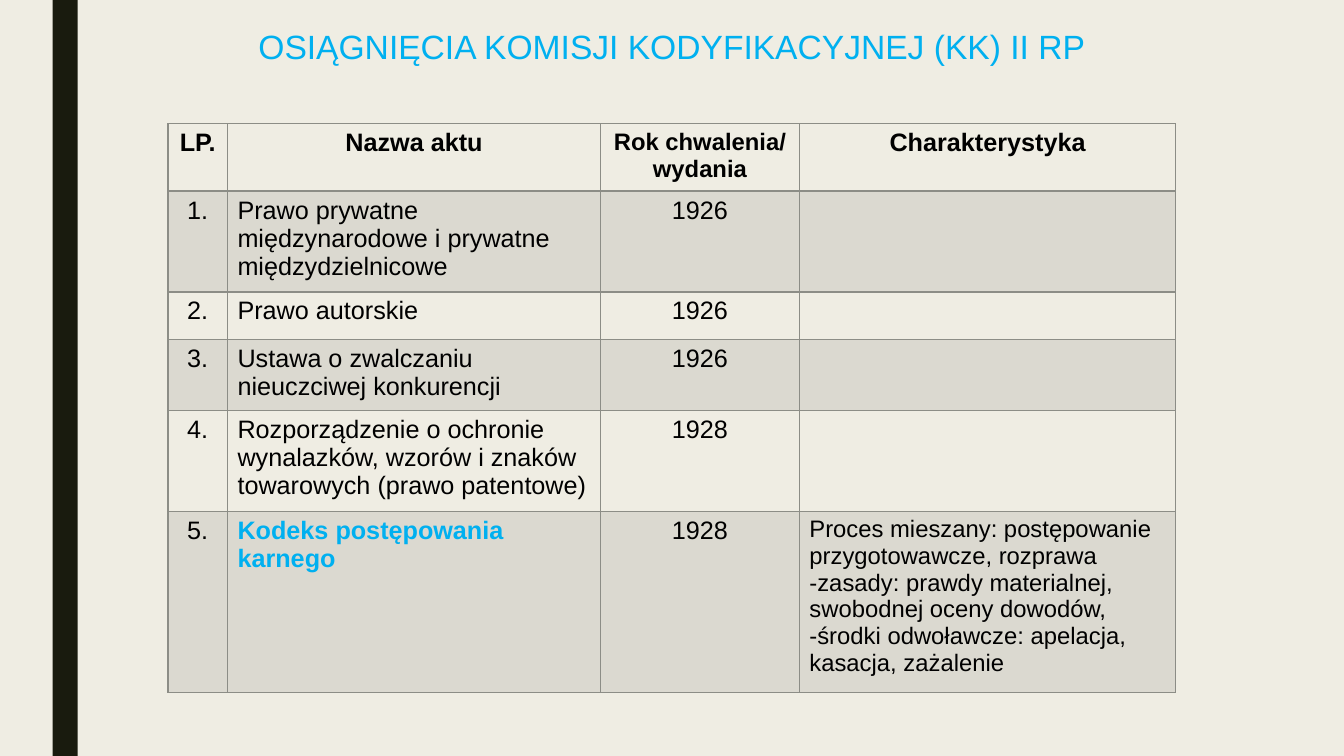
import pptx
import pptx.util
import pptx.dml.color
import pptx.enum.shapes
import pptx.enum.text
import pptx.oxml
import pptx.oxml.ns
import lxml.etree

Pt = pptx.util.Pt
CENTER = pptx.enum.text.PP_ALIGN.CENTER
LEFT = pptx.enum.text.PP_ALIGN.LEFT

BACKGROUND = "EFEDE3"
BAR = "191B0E"
ACCENT = "00B0F0"
INK = "000000"
GRID = "8C8D86"
BAND_OPACITY = 20

COLUMN_WIDTHS = [42.5, 266.5, 142, 269]
ROW_HEIGHTS = [48, 72, 34, 50.5, 72, 129.5]
ALIGNMENTS = [CENTER, LEFT, CENTER, LEFT]
ROWS = [
    ["LP.", "Nazwa aktu", "Rok chwalenia/ wydania", "Charakterystyka"],
    ["1.", "Prawo prywatne międzynarodowe i prywatne\nmiędzydzielnicowe", "1926", ""],
    ["2.", "Prawo autorskie", "1926", ""],
    ["3.", "Ustawa o zwalczaniu nieuczciwej konkurencji", "1926", ""],
    ["4.", "Rozporządzenie o ochronie wynalazków, wzorów i znaków\n"
           "towarowych (prawo patentowe)", "1928", ""],
    ["5.", "Kodeks postępowania\nkarnego", "1928",
     "Proces mieszany: postępowanie przygotowawcze, rozprawa\n"
     "-zasady: prawdy materialnej,\n"
     "swobodnej oceny dowodów,\n"
     "-środki odwoławcze: apelacja, kasacja, zażalenie"],
]
SPECIAL_FORMATS = {
    (0, 2): {"size": Pt(17)},
    (5, 1): {"bold": True, "color": ACCENT},
    (5, 3): {"size": Pt(17)},
}


def rgb(value):
    return pptx.dml.color.RGBColor.from_string(value)


class SlideBuilder:
    font_name = "Arial"

    def __init__(self, slide):
        self.slide = slide

    def background(self, color):
        fill = self.slide.background.fill
        fill.solid()
        fill.fore_color.rgb = rgb(color)

    def fill_text(self, frame, text, alignment, color=INK, **formats):
        frame.text = text
        for paragraph in frame.paragraphs:
            paragraph.alignment = alignment
            for run in paragraph.runs:
                run.font.color.rgb = rgb(color)
                for name, value in {"name": self.font_name, **formats}.items():
                    setattr(run.font, name, value)

    def rectangle(self, left, top, width, height, color):
        shape = self.slide.shapes.add_shape(
            pptx.enum.shapes.MSO_SHAPE.RECTANGLE, Pt(left), Pt(top), Pt(width), Pt(height))
        shape.shadow.inherit = False
        shape.fill.solid()
        shape.fill.fore_color.rgb = rgb(color)
        shape.line.fill.background()

    def text_box(self, left, top, width, height, text, **formats):
        shape = self.slide.shapes.add_textbox(Pt(left), Pt(top), Pt(width), Pt(height))
        shape.text_frame.word_wrap = True
        shape.text_frame.auto_size = pptx.enum.text.MSO_AUTO_SIZE.SHAPE_TO_FIT_TEXT
        self.fill_text(shape.text_frame, text, CENTER, **formats)

    def borders(self, cell, widths):
        properties = cell._tc.get_or_add_tcPr()
        for side, width in widths.items():
            line = lxml.etree.SubElement(
                properties, pptx.oxml.ns.qn(f"a:ln{side}"), w=str(int(Pt(width))))
            fill = lxml.etree.SubElement(line, pptx.oxml.ns.qn("a:solidFill"))
            lxml.etree.SubElement(fill, pptx.oxml.ns.qn("a:srgbClr"), val=GRID)

    def cell_fill(self, cell, banded):
        if not banded:
            cell.fill.background()
            return
        cell.fill.solid()
        cell.fill.fore_color.rgb = rgb(GRID)
        color = cell._tc.tcPr.find(pptx.oxml.ns.qn("a:solidFill"))[0]
        lxml.etree.SubElement(color, pptx.oxml.ns.qn("a:alpha"), val=str(BAND_OPACITY * 1000))

    def table(self, left, top, rows):
        table = self.slide.shapes.add_table(
            len(rows), len(COLUMN_WIDTHS), Pt(left), Pt(top),
            Pt(sum(COLUMN_WIDTHS)), Pt(sum(ROW_HEIGHTS))).table
        table.first_row = False
        table.horz_banding = False
        for column, width in zip(table.columns, COLUMN_WIDTHS):
            column.width = Pt(width)
        for row, height in zip(table.rows, ROW_HEIGHTS):
            row.height = Pt(height)
        for row_index, texts in enumerate(rows):
            header = row_index == 0
            widths = {"L": 1, "R": 1, "T": 2 if row_index == 1 else 1, "B": 2 if header else 1}
            for column_index, text in enumerate(texts):
                cell = table.cell(row_index, column_index)
                formats = {"size": Pt(18), "bold": header,
                           **SPECIAL_FORMATS.get((row_index, column_index), {})}
                alignment = CENTER if header else ALIGNMENTS[column_index]
                self.fill_text(cell.text_frame, text, alignment, **formats)
                self.borders(cell, widths)
                self.cell_fill(cell, banded=row_index % 2 == 1)


def main():
    presentation = pptx.Presentation()
    presentation.slide_width = Pt(960)
    presentation.slide_height = Pt(540)
    builder = SlideBuilder(presentation.slides.add_slide(presentation.slide_layouts[6]))
    builder.background(BACKGROUND)
    builder.rectangle(37.5, 0, 18, 540, BAR)
    builder.text_box(120, 15, 720, 36.5, "OSIĄGNIĘCIA KOMISJI KODYFIKACYJNEJ (KK) II RP",
                     size=Pt(24), color=ACCENT)
    builder.table(120, 88.5, ROWS)
    presentation.save("out.pptx")


if __name__ == "__main__":
    main()
